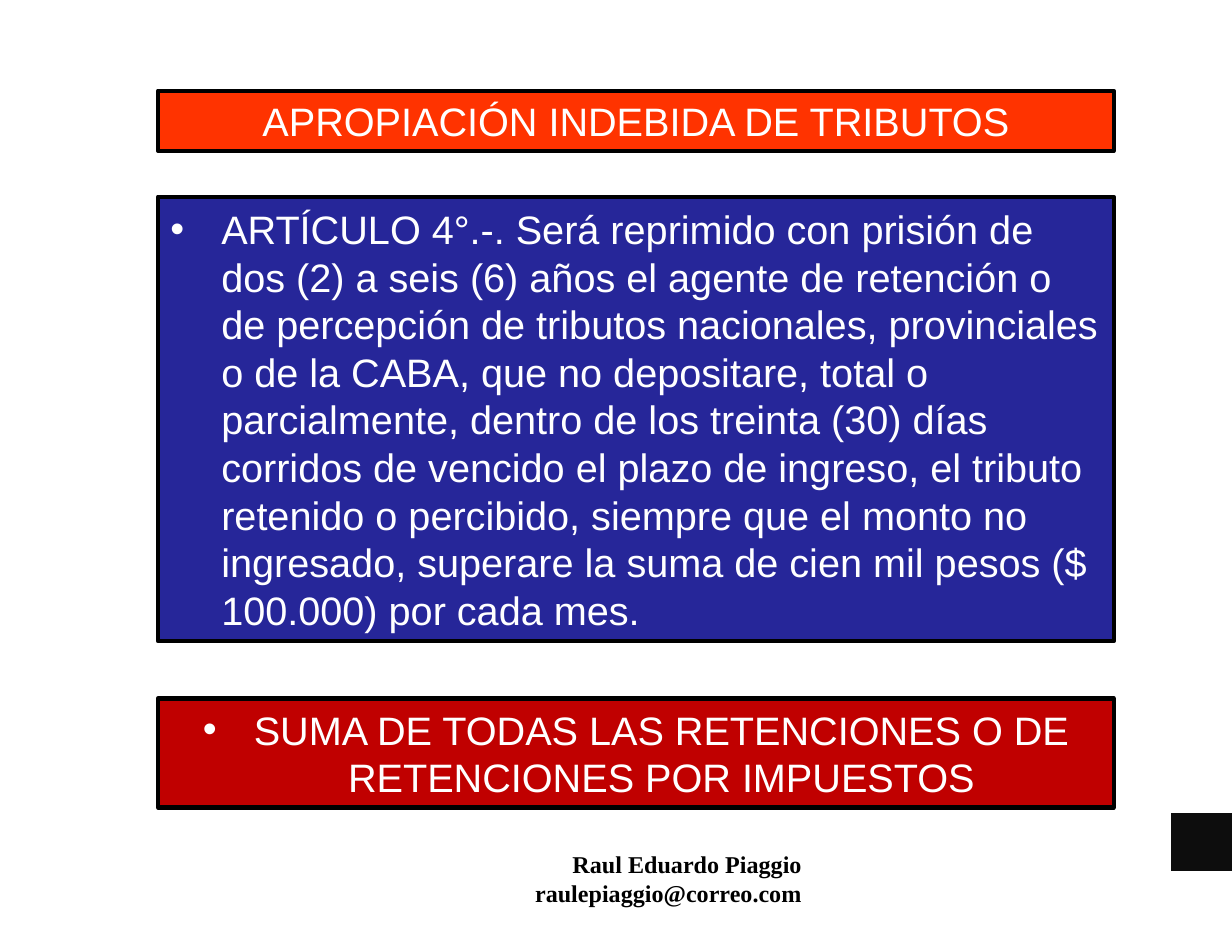
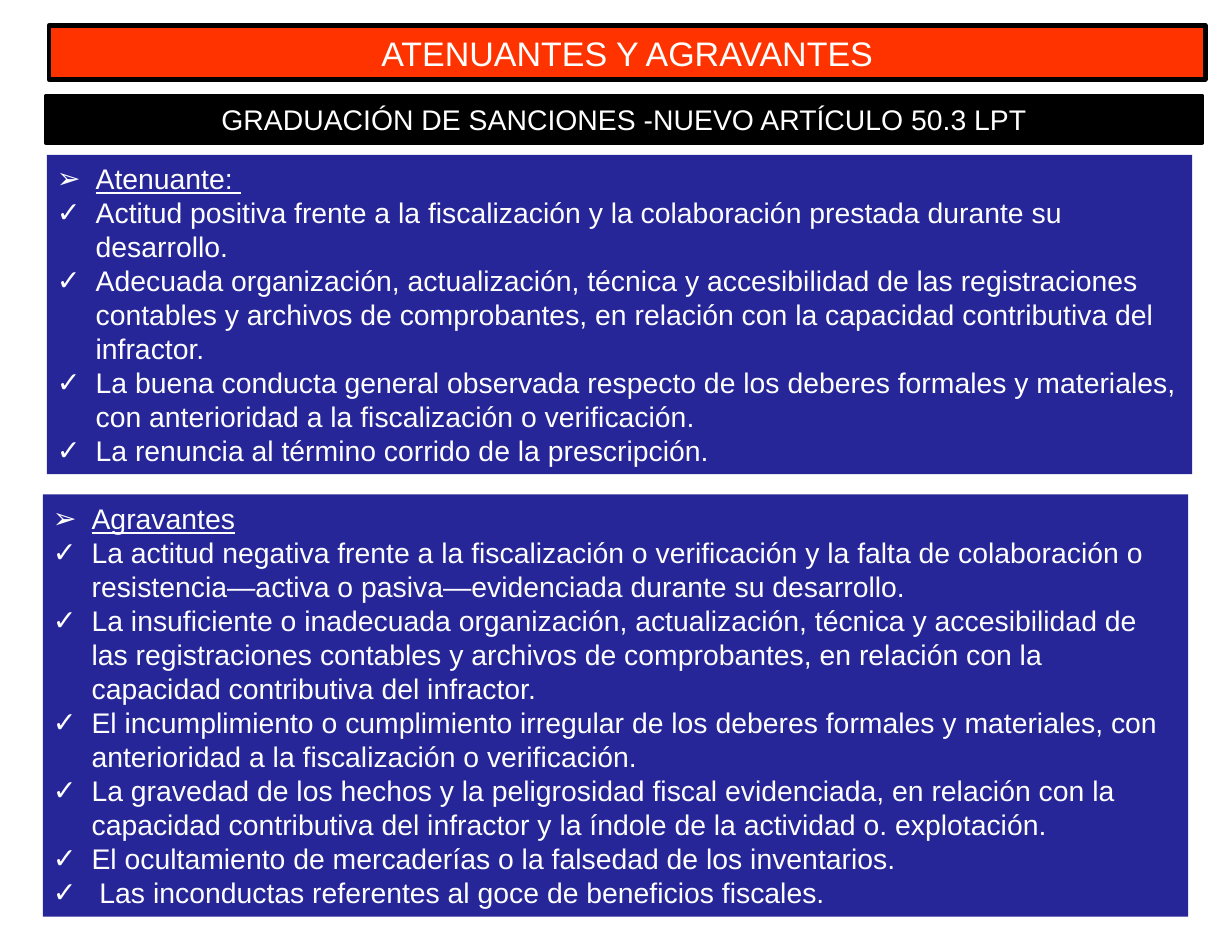
from pptx import Presentation
from pptx.dml.color import RGBColor
from pptx.enum.shapes import MSO_SHAPE
from pptx.enum.text import MSO_ANCHOR, MSO_AUTO_SIZE, PP_ALIGN
from pptx.oxml.ns import qn
from pptx.util import Inches, Pt
from lxml.etree import SubElement

RED, BLUE, WINE = "FF3300", "262699", "C00000"
BLACK, WHITE, DARK = "000000", "FFFFFF", "0D0D0D"
CENTER, LEFT = PP_ALIGN.CENTER, PP_ALIGN.LEFT
DOT, ARROW, CHECK = "•", "➢", "✓"

CRIME = "APROPIACIÓN INDEBIDA DE TRIBUTOS"
LAW = (
    "ARTÍCULO 4°.-. Será reprimido con prisión de dos (2) a seis (6) años "
    "el agente de retención o de percepción de tributos nacionales, "
    "provinciales o de la CABA, que no depositare, total o parcialmente, "
    "dentro de los treinta (30) días corridos de vencido el plazo de ingreso, "
    "el tributo retenido o percibido, siempre que el monto no ingresado, "
    "superare la suma de cien mil pesos ($ 100.000) por cada mes."
)
SUM = "SUMA DE TODAS LAS RETENCIONES O DE RETENCIONES POR IMPUESTOS"
AUTHOR = "Raul Eduardo Piaggio raulepiaggio@correo.com"

FACTORS = "ATENUANTES Y AGRAVANTES"
RULE = "GRADUACIÓN DE SANCIONES -NUEVO ARTÍCULO 50.3 LPT"
LISTS = [
    ((0.46, 1.52, 11.23, 3.13), "Atenuante: ", [
        "Actitud positiva frente a la fiscalización y la colaboración "
        "prestada durante su desarrollo.",
        "Adecuada organización, actualización, técnica y accesibilidad de las "
        "registraciones contables y archivos de comprobantes, en relación con "
        "la capacidad contributiva del infractor.",
        "La buena conducta general observada respecto de los deberes formales "
        "y materiales, con anterioridad a la fiscalización o verificación.",
        "La renuncia al término corrido de la prescripción.",
    ]),
    ((0.42, 4.85, 11.23, 4.14), "Agravantes", [
        "La actitud negativa frente a la fiscalización o verificación y la "
        "falta de colaboración o resistencia—activa o pasiva—evidenciada "
        "durante su desarrollo.",
        "La insuficiente o inadecuada organización, actualización, técnica y "
        "accesibilidad de las registraciones contables y archivos de "
        "comprobantes, en relación con la capacidad contributiva del infractor.",
        "El incumplimiento o cumplimiento irregular de los deberes formales y "
        "materiales, con anterioridad a la fiscalización o verificación.",
        "La gravedad de los hechos y la peligrosidad fiscal evidenciada, en "
        "relación con la capacidad contributiva del infractor y la índole de "
        "la actividad o. explotación.",
        "El ocultamiento de mercaderías o la falsedad de los inventarios.",
        " Las inconductas referentes al goce de beneficios fiscales.",
    ]),
]


def color(code):
    return RGBColor.from_string(code)


def block(slide, spot, fill, line=True, kind=MSO_SHAPE.RECTANGLE):
    shape = slide.shapes.add_shape(kind, *map(Inches, spot))
    shape.shadow.inherit = False
    shape.fill.solid()
    shape.fill.fore_color.rgb = color(fill)
    if line:
        shape.line.color.rgb = color(BLACK)
        shape.line.width = Pt(3)
    else:
        shape.line.fill.background()
    return shape


def setup(shape, pad, anchor=MSO_ANCHOR.MIDDLE):
    frame = shape.text_frame
    frame.word_wrap = True
    frame.vertical_anchor = anchor
    frame.margin_left = frame.margin_right = Inches(pad[0])
    frame.margin_top = frame.margin_bottom = Inches(pad[1])
    return frame


def style(para, size, tint=WHITE, face="Arial", align=LEFT):
    para.alignment = align
    para.font.size = Pt(size)
    para.font.name = face
    para.font.color.rgb = color(tint)


def bullet(para, mark, indent):
    props = para._p.get_or_add_pPr()
    props.set("marL", str(Inches(indent)))
    props.set("indent", str(-Inches(indent)))
    SubElement(props, qn("a:buFont")).set("typeface", "Arial")
    SubElement(props, qn("a:buChar")).set("char", mark)


def panel(slide, spot, fill, text, size, align=CENTER, mark=None):
    frame = setup(block(slide, spot, fill), (0.12, 0.06))
    frame.auto_size = MSO_AUTO_SIZE.SHAPE_TO_FIT_TEXT
    para = frame.paragraphs[0]
    para.text = text
    if mark:
        bullet(para, mark, 0.5)
    style(para, size, align=align)


def listing(slide, spot, head, items):
    frame = setup(block(slide, spot, BLUE, False), (0.1, 0.05))
    frame.auto_size = MSO_AUTO_SIZE.SHAPE_TO_FIT_TEXT
    for i, text in enumerate([head] + items):
        para = frame.add_paragraph() if i else frame.paragraphs[0]
        para.text = text
        bullet(para, CHECK if i else ARROW, 0.38)
        style(para, 20)
        para.font.underline = i == 0


def footer(slide):
    box = slide.shapes.add_textbox(*map(Inches, (4.13, 8.23, 3.83, 0.61)))
    para = setup(box, (0.1, 0.1), MSO_ANCHOR.TOP).paragraphs[0]
    para.text = AUTHOR
    style(para, 17, BLACK, "Times New Roman", PP_ALIGN.RIGHT)
    para.font.bold = True
    block(slide, (11.48, 7.97, 0.6, 0.57), DARK, False,
          MSO_SHAPE.ACTION_BUTTON_CUSTOM)


def main():
    deck = Presentation()
    deck.slide_width, deck.slide_height = Inches(12.08), Inches(9.17)
    crime, factors = (deck.slides.add_slide(deck.slide_layouts[6])
                      for _ in range(2))

    footer(crime)
    panel(crime, (1.55, 0.89, 9.37, 0.59), RED, CRIME, 28)
    panel(crime, (1.55, 1.93, 9.37, 4.36), BLUE, LAW, 28, LEFT, DOT)
    panel(crime, (1.55, 6.85, 9.37, 1.07), WINE, SUM, 28, mark=DOT)

    panel(factors, (0.48, 0.25, 11.34, 0.53), RED, FACTORS, 24)
    panel(factors, (0.45, 0.94, 11.34, 0.46), BLACK, RULE, 20)
    for spot, head, items in LISTS:
        listing(factors, spot, head, items)

    deck.save("out.pptx")


if __name__ == "__main__":
    main()
